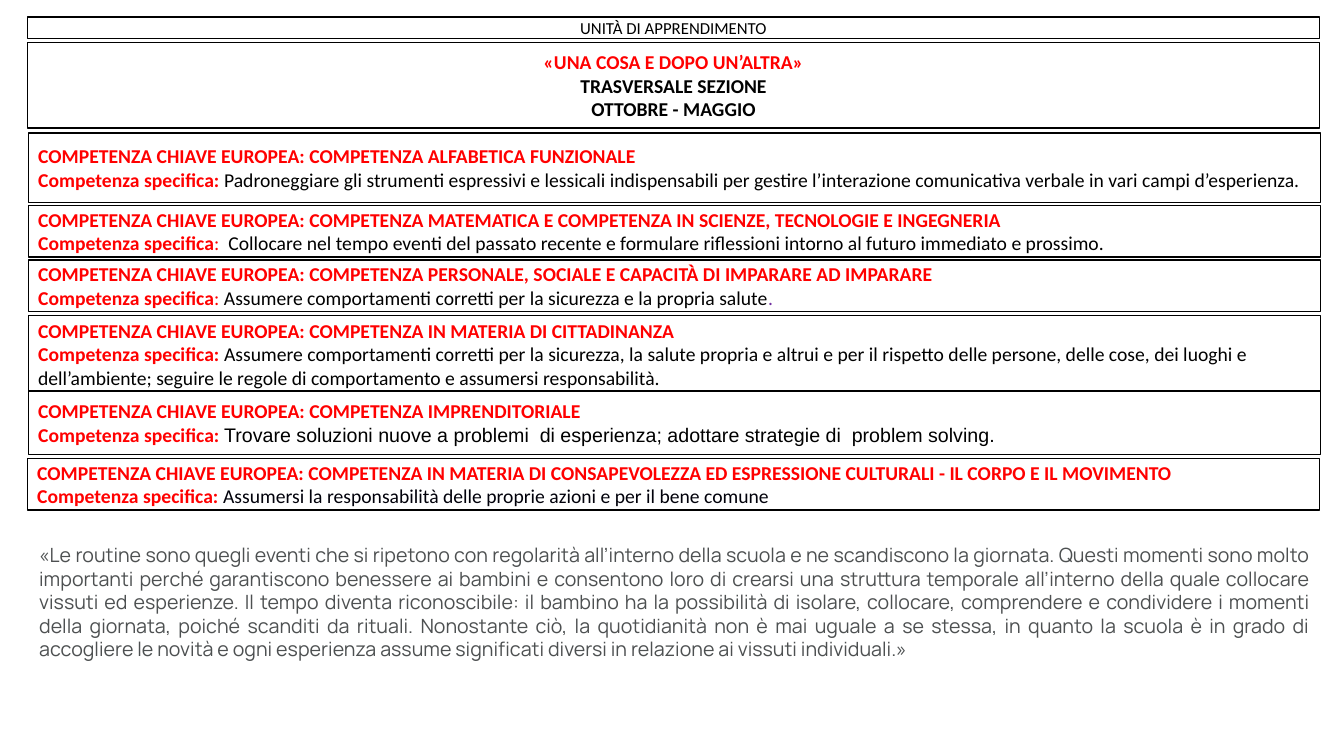
from dataclasses import dataclass

from pptx import Presentation
from pptx import util as u
from pptx.dml.color import RGBColor
from pptx.enum import shapes, text

LEFT, MID, FULL = text.PP_ALIGN.LEFT, text.PP_ALIGN.CENTER, text.PP_ALIGN.JUSTIFY


@dataclass
class Theme:
    face: str = "Calibri"
    alt: str = "Arial"
    quote: str = "Manrope"
    small: int = 12
    size: int = 14
    red: str = "FF0000"
    ink: str = "000000"
    navy: str = "00000A"
    plum: str = "7030A0"
    grey: str = "4D5051"
    paper: str = "FFFFFF"


class Page:
    def __init__(self, deck, theme):
        self.theme = theme
        self.slide = deck.slides.add_slide(deck.slide_layouts[6])

    def box(self, left, top, high):
        """Add a bordered box and return its text frame."""
        rect = self.slide.shapes.add_shape(
            shapes.MSO_SHAPE.RECTANGLE,
            *map(u.Inches, (left, top, 12.82, high)))
        rect.shadow.inherit = False
        rect.fill.solid()
        rect.fill.fore_color.rgb = RGBColor.from_string(self.theme.paper)
        rect.line.color.rgb = RGBColor.from_string(self.theme.ink)
        rect.line.width = u.Pt(1)
        frame = rect.text_frame
        frame.word_wrap = True
        frame.vertical_anchor = text.MSO_ANCHOR.MIDDLE
        return frame

    def style(self, font, color, bold=False, face=None, size=None):
        font.name = face or self.theme.face
        font.size = u.Pt(size or self.theme.size)
        font.bold = bold
        font.color.rgb = RGBColor.from_string(color)

    def line(self, frame, words, align, color, **look):
        """Write one paragraph in a single style."""
        para = frame.paragraphs[0]
        if para.runs:
            para = frame.add_paragraph()
        para.alignment = align
        para.add_run().text = words
        self.style(para.font, color, **look)

    def skill(self, left, top, high, name, align, parts):
        """Add a competence box: red heading, then a line of mixed runs."""
        frame = self.box(left, top, high)
        self.line(frame, "COMPETENZA CHIAVE EUROPEA: COMPETENZA " + name,
                  LEFT, self.theme.red, bold=True)
        para = frame.add_paragraph()
        para.alignment = align
        for words, color, bold, face in parts:
            run = para.add_run()
            run.text = words
            self.style(run.font, color, bold, face)

    def note(self, left, top, wide, high, words):
        frame = self.slide.shapes.add_textbox(
            *map(u.Inches, (left, top, wide, high))).text_frame
        frame.word_wrap = True
        self.line(frame, words, FULL, self.theme.grey, face=self.theme.quote)


def main():
    deck = Presentation()
    deck.slide_width, deck.slide_height = u.Inches(13.33), u.Inches(7.5)
    look = Theme()
    page = Page(deck, look)

    # Heading boxes
    page.line(page.box(0.27, 0.17, 0.21), "UNITÀ DI APPRENDIMENTO",
              MID, look.ink, size=look.small)
    title = page.box(0.27, 0.42, 0.85)
    for words, color in (("«UNA COSA E DOPO UN’ALTRA»", look.red),
                         ("TRASVERSALE SEZIONE", look.ink),
                         ("OTTOBRE - MAGGIO", look.ink)):
        page.line(title, words, MID, color, bold=True)

    # Competence boxes
    label = ("Competenza specifica: ", look.red, True, None)
    short = ("Competenza specifica", look.red, True, None)

    def body(words, color=look.ink, face=None):
        return words, color, False, face

    skills = [
        (0.28, 1.32, 0.69, "ALFABETICA FUNZIONALE", FULL,
         [label, body("Padroneggiare gli strumenti espressivi e lessicali "
                      "indispensabili per gestire l’interazione comunicativa "
                      "verbale in vari campi d’esperienza.")]),
        (0.28, 2.04, 0.51,
         "MATEMATICA E COMPETENZA IN SCIENZE, TECNOLOGIE E INGEGNERIA", FULL,
         [short, body(":  ", look.red),
          body("Collocare nel tempo eventi del passato recente e formulare "
               "riflessioni intorno al futuro immediato e prossimo.")]),
        (0.28, 2.58, 0.51,
         "PERSONALE, SOCIALE E CAPACITÀ DI IMPARARE AD IMPARARE", LEFT,
         [short, body(": ", look.red),
          body("Assumere comportamenti corretti per la sicurezza e la "
               "propria salute"), body(".", look.plum)]),
        (0.28, 3.13, 0.76, "IN MATERIA DI CITTADINANZA", LEFT,
         [label, body("Assumere comportamenti corretti per la sicurezza, la "
                      "salute propria e altrui e per il rispetto delle "
                      "persone, delle cose, dei luoghi e dell’ambiente; "
                      "seguire le regole di comportamento e assumersi "
                      "responsabilità.")]),
        (0.28, 3.88, 0.63, "IMPRENDITORIALE", LEFT,
         [label, body("Trovare soluzioni nuove a problemi  di esperienza; "
                      "adottare strategie di  problem solving.",
                      face=look.alt)]),
        (0.27, 4.55, 0.51, "IN MATERIA DI CONSAPEVOLEZZA ED ESPRESSIONE "
         "CULTURALI - IL CORPO E IL MOVIMENTO", LEFT,
         [label, body("Assumersi la responsabilità delle proprie azioni e "
                      "per il bene comune", look.navy)]),
    ]
    for skill in skills:
        page.skill(*skill)

    # Closing quote
    page.note(0.29, 5.34, 12.81, 1.28, (
        "«Le routine sono quegli eventi che si ripetono con regolarità "
        "all’interno della scuola e ne scandiscono la giornata. Questi "
        "momenti sono molto importanti perché garantiscono benessere ai "
        "bambini e consentono loro di crearsi una struttura temporale "
        "all’interno della quale collocare vissuti ed esperienze. Il tempo "
        "diventa riconoscibile: il bambino ha la possibilità di isolare, "
        "collocare, comprendere e condividere i momenti della giornata, "
        "poiché scanditi da rituali. Nonostante ciò, la quotidianità non è "
        "mai uguale a se stessa, in quanto la scuola è in grado di "
        "accogliere le novità e ogni esperienza assume significati diversi "
        "in relazione ai vissuti individuali.»"))

    deck.save("out.pptx")


if __name__ == "__main__":
    main()
